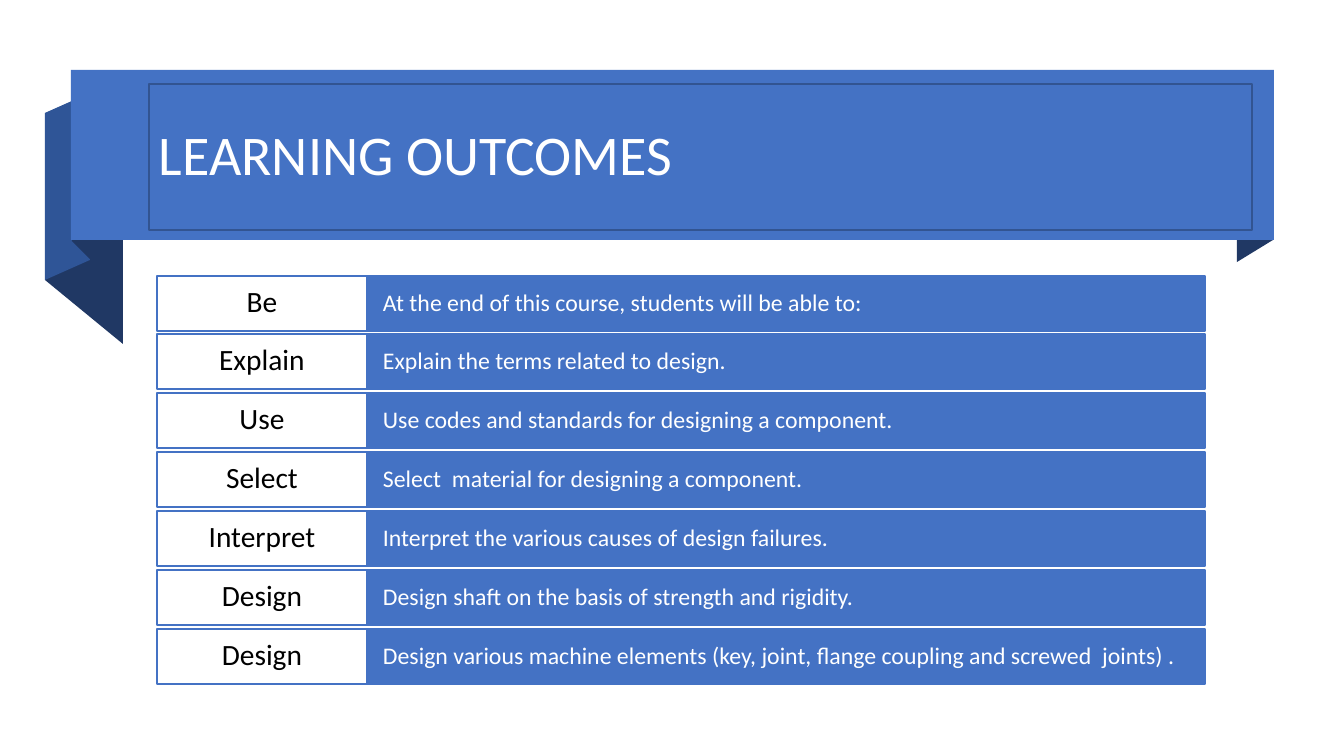
from pptx import Presentation
from pptx.dml.color import RGBColor
from pptx.enum.shapes import MSO_SHAPE
from pptx.enum.text import MSO_ANCHOR, PP_ALIGN
from pptx.util import Pt

RECTANGLE = MSO_SHAPE.RECTANGLE
MIDDLE = MSO_ANCHOR.MIDDLE
LEFT, CENTER = PP_ALIGN.LEFT, PP_ALIGN.CENTER

EMU_PER_PX = 914400 / 100.8
FONT = "Calibri"
BLUE, EDGE, FOLD, NAVY = "4472C4", "325491", "2F5597", "203864"
WHITE, BLACK = "FFFFFF", "000000"

RIBBON_FOLDS = [
    (NAVY, [(1273, 240), (1237, 262), (1237, 92), (1273, 71)]),
    (NAVY, [(123, 344), (45, 280), (45, 113), (123, 176)]),
    (FOLD, [(90, 260), (45, 280), (45, 113), (90, 93)]),
    (NAVY, [(90, 259), (72, 241), (72, 71), (90, 90)]),
]

OUTCOMES = [
    ("Be", "At the end of this course, students will be able to:"),
    ("Explain", "Explain the terms related to design."),
    ("Use", "Use codes and standards for designing a component."),
    ("Select", "Select  material for designing a component."),
    ("Interpret", "Interpret the various causes of design failures."),
    ("Design", "Design shaft on the basis of strength and rigidity."),
    ("Design", "Design various machine elements "
               "(key, joint, flange coupling and screwed  joints) ."),
]
ROWS_TOP, ROWS_SPAN, ROW_HEIGHT = 276, 353, 55
VERB_LEFT, VERB_WIDTH, OUTCOME_WIDTH = 157, 210, 838


def px(length):
    return round(length * EMU_PER_PX)


def color(hex_value):
    return RGBColor.from_string(hex_value)


def paint(shape, fill, line=None):
    shape.shadow.inherit = False
    shape.fill.solid()
    shape.fill.fore_color.rgb = color(fill)
    if line:
        shape.line.color.rgb = color(line)
        shape.line.width = Pt(1)
    else:
        shape.line.fill.background()


def add_fold(page, fill, points):
    corners = [(px(x), px(y)) for x, y in points]
    builder = page.shapes.build_freeform(*corners[0])
    builder.add_line_segments(corners[1:], close=True)
    paint(builder.convert_to_shape(), fill)


def add_box(page, left, top, width, height, fill, line=None):
    box = page.shapes.add_shape(RECTANGLE, px(left), px(top), px(width), px(height))
    paint(box, fill, line)
    return box


def write(box, text, size, ink, align=LEFT, inset_x=10, inset_y=5):
    frame = box.text_frame
    frame.word_wrap = True
    frame.vertical_anchor = MIDDLE
    frame.margin_left = frame.margin_right = px(inset_x)
    frame.margin_top = frame.margin_bottom = px(inset_y)
    para = frame.paragraphs[0]
    para.text = text
    para.alignment = align
    para.line_spacing = 0.9
    para.font.name = FONT
    para.font.size = Pt(size)
    para.font.color.rgb = color(ink)


def add_outcome(page, top, verb, outcome):
    outcome_box = add_box(page, VERB_LEFT + VERB_WIDTH, top, OUTCOME_WIDTH,
                          ROW_HEIGHT, BLUE, BLUE)
    write(outcome_box, outcome, 17, WHITE, inset_x=16, inset_y=14)
    verb_box = add_box(page, VERB_LEFT, top, VERB_WIDTH, ROW_HEIGHT, WHITE, BLUE)
    write(verb_box, verb, 21, BLACK, CENTER, inset_x=11)


def main():
    deck = Presentation()
    deck.slide_width, deck.slide_height = px(1344), px(756)
    page = deck.slides.add_slide(deck.slide_layouts[6])

    for fill, points in RIBBON_FOLDS:
        add_fold(page, fill, points)
    add_box(page, 71, 70, 1203, 170, BLUE)
    title = add_box(page, 149, 84, 1103, 146, BLUE, EDGE)
    write(title, "LEARNING OUTCOMES", 40, WHITE)

    for row, (verb, outcome) in enumerate(OUTCOMES):
        top = ROWS_TOP + ROWS_SPAN * row // (len(OUTCOMES) - 1)
        add_outcome(page, top, verb, outcome)

    deck.save("out.pptx")


if __name__ == "__main__":
    main()
